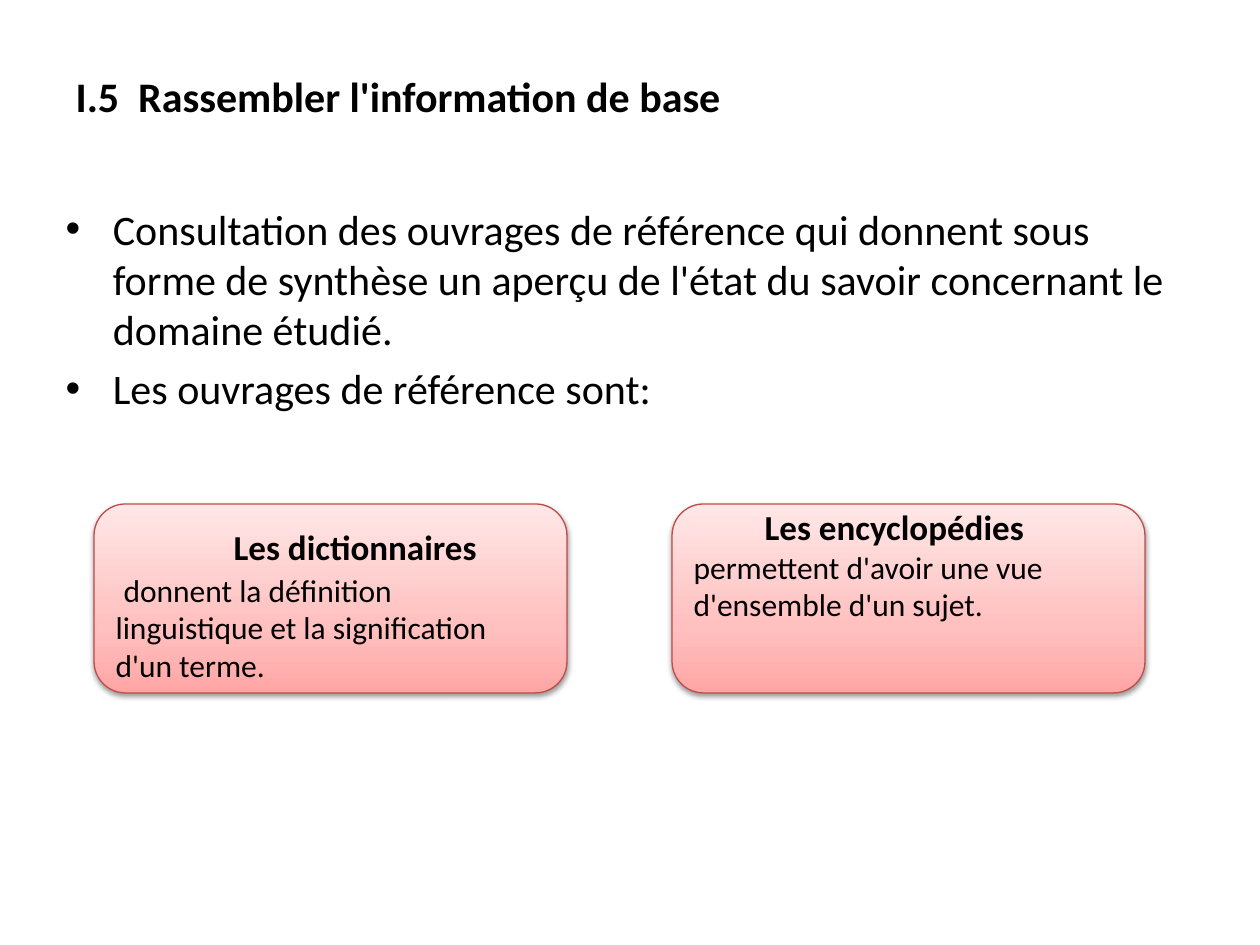
"""Build the slide on gathering background information."""
from copy import deepcopy
from pptx import Presentation
from pptx.dml.color import RGBColor
from pptx.enum.shapes import MSO_SHAPE
from pptx.enum.text import MSO_ANCHOR, PP_ALIGN
from pptx.oxml import parse_xml
from pptx.oxml.ns import qn
from pptx.util import Pt

PX = 914400 / 126
STOPS = [(0, "FFA6A5"), (0.35, "FFC0BF"), (1, "FFE7E7")]
SHADOW = (
    '<a:outerShdw xmlns:a="http://schemas.openxmlformats.org/drawingml/2006/main" '
    'blurRad="40000" dist="20000" dir="5400000" rotWithShape="0">'
    '<a:srgbClr val="000000"><a:alpha val="38000"/></a:srgbClr></a:outerShdw>'
)


def color(code):
    return RGBColor.from_string(code)


def write(para, text, size, bold=False):
    run = para.add_run()
    run.text = text
    font = run.font
    font.name, font.size, font.bold = "Calibri", Pt(size), bold
    font.color.rgb = color("000000")


deck = Presentation()
deck.slide_width, deck.slide_height = int(1260 * PX), int(945 * PX)
slide = deck.slides.add_slide(deck.slide_layouts[1])
title, body = slide.placeholders

for holder, area in [(title, (63, 38, 1134, 157)), (body, (53, 189, 1134, 624))]:
    holder.left, holder.top, holder.width, holder.height = [int(n * PX) for n in area]

frame = title.text_frame
frame.vertical_anchor = MSO_ANCHOR.MIDDLE
frame.margin_bottom = int(48 * PX)
frame.paragraphs[0].alignment = PP_ALIGN.LEFT
write(frame.paragraphs[0], "I.5  Rassembler l'information de base", 24, True)

points = [
    "Consultation des ouvrages de référence qui donnent sous forme de synthèse "
    "un aperçu de l'état du savoir concernant le domaine étudié.",
    "Les ouvrages de référence sont:",
]
frame = body.text_frame
for i, text in enumerate(points):
    para = frame.add_paragraph() if i else frame.paragraphs[0]
    if not i:
        para.space_before = Pt(0)
        frame.margin_top = int(14 * PX)
    write(para, text, 24)

cards = [
    (94, 12, 0, 2, [
        ("Les dictionnaires", 20, 118),
        ("donnent la définition linguistique et la signification d'un terme.", 18, 8),
    ]),
    (672, 0, 68, 0, [
        ("Les encyclopédies", 20, 71),
        ("permettent d'avoir une vue d'ensemble d'un sujet.", 18, 0),
    ]),
]
for left, top, bottom, gap, lines in cards:
    card = slide.shapes.add_shape(
        MSO_SHAPE.ROUNDED_RECTANGLE,
        *[int(n * PX) for n in (left, 504, 473, 189)])
    card.fill.gradient()
    card.fill.gradient_angle = 90
    stops = card._element.spPr.find(qn("a:gradFill")).find(qn("a:gsLst"))
    stops.append(deepcopy(stops[0]))
    for stop, (place, code) in zip(card.fill.gradient_stops, STOPS):
        stop.position = place
        stop.color.rgb = color(code)
    card.line.color.rgb = color("BF4C48")
    card.line.width = Pt(0.75)
    card.shadow.inherit = False
    card._element.spPr.find(qn("a:effectLst")).append(parse_xml(SHADOW))

    frame = card.text_frame
    frame.word_wrap = True
    frame.vertical_anchor = MSO_ANCHOR.MIDDLE
    frame.margin_top, frame.margin_bottom = int(top * PX), int(bottom * PX)
    for i, (text, size, indent) in enumerate(lines):
        para = frame.add_paragraph() if i else frame.paragraphs[0]
        para.alignment = PP_ALIGN.LEFT
        para.space_before = Pt(gap * i)
        props = para._p.get_or_add_pPr()
        props.set("marL", "0")
        props.set("indent", str(int(indent * PX)))
        write(para, text, size, i == 0)

deck.save("out.pptx")
